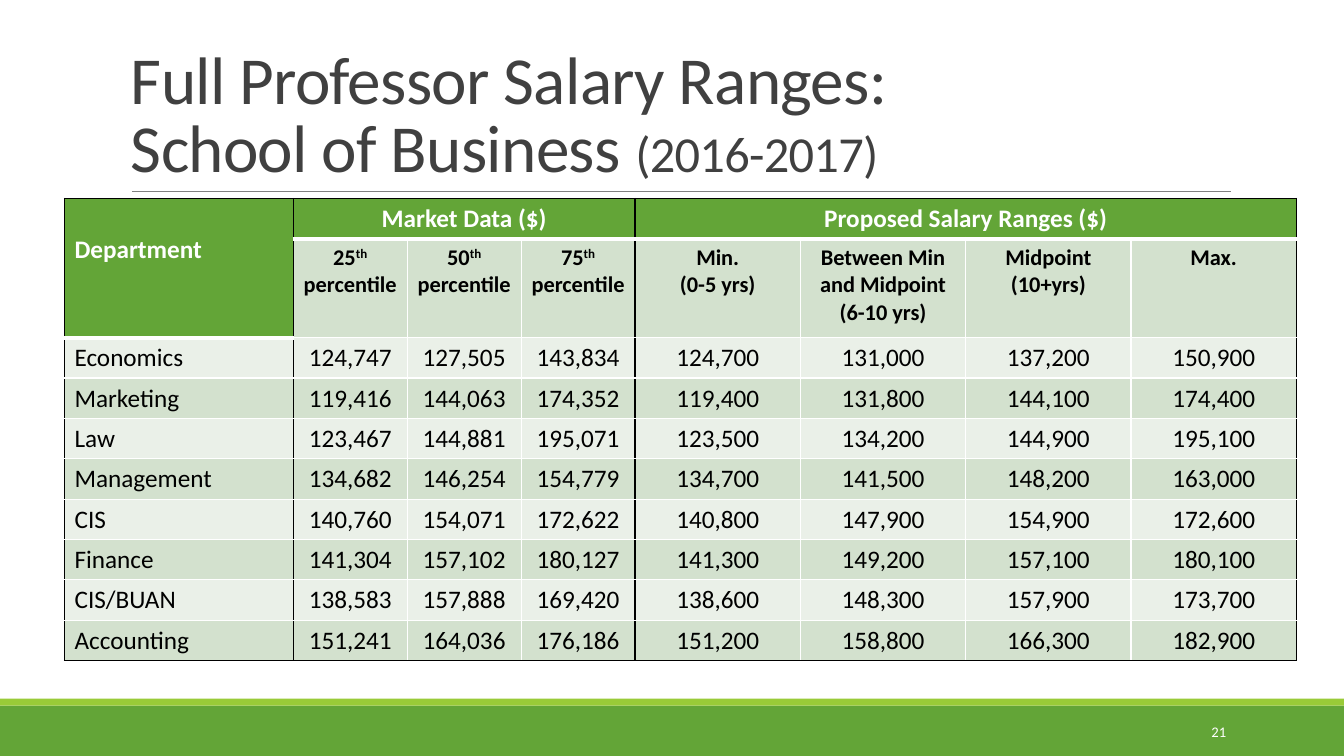
from lxml.etree import SubElement
from pptx import Presentation
from pptx.dml.color import RGBColor
from pptx.enum.shapes import MSO_CONNECTOR, MSO_SHAPE
from pptx.enum.text import MSO_ANCHOR as Anchor, PP_ALIGN as Align
from pptx.oxml.ns import qn
from pptx.util import Pt

COLORS = {
    "green": "63A537", "lime": "99CB38", "gray": "808080", "title": "404040",
    "band_dark": "D3E1CE", "band_light": "EAF0E8", "white": "FFFFFF", "black": "000000",
}
FONT = "Calibri"
WIDTH, HEIGHT = 960, 540

GROUPS = {0: "Department", 1: "Market Data ($)", 4: "Proposed Salary Ranges ($)"}
PERCENTILES = (25, 50, 75)
RANGES = [("Min.", "(0-5 yrs)"), ("Between Min and Midpoint", "(6-10 yrs)"),
          ("Midpoint", "(10+yrs)"), ("Max.",)]
SALARIES = [
    ("Economics", 124747, 127505, 143834, 124700, 131000, 137200, 150900),
    ("Marketing", 119416, 144063, 174352, 119400, 131800, 144100, 174400),
    ("Law", 123467, 144881, 195071, 123500, 134200, 144900, 195100),
    ("Management", 134682, 146254, 154779, 134700, 141500, 148200, 163000),
    ("CIS", 140760, 154071, 172622, 140800, 147900, 154900, 172600),
    ("Finance", 141304, 157102, 180127, 141300, 149200, 157100, 180100),
    ("CIS/BUAN", 138583, 157888, 169420, 138600, 148300, 157900, 173700),
    ("Accounting", 151241, 164036, 176186, 151200, 158800, 166300, 182900),
]
COLUMN_WIDTHS = [163.4] + [81.4] * 3 + [118.1] * 4
ROW_HEIGHTS = [28.1, 70.6] + [28.1] * len(SALARIES)
BLACK_EDGES = (0, 1, 4, 8)


class SlideBuilder:
    def __init__(self, slide):
        self.slide = slide

    def rectangle(self, left, top, width, height, color):
        shape = self.slide.shapes.add_shape(
            MSO_SHAPE.RECTANGLE, Pt(left), Pt(top), Pt(width), Pt(height))
        shape.shadow.inherit = False
        shape.fill.solid()
        shape.fill.fore_color.rgb = RGBColor.from_string(COLORS[color])
        shape.line.fill.background()

    def line(self, x1, y1, x2, y2, color, weight):
        connector = self.slide.shapes.add_connector(
            MSO_CONNECTOR.STRAIGHT, Pt(x1), Pt(y1), Pt(x2), Pt(y2))
        connector.line.color.rgb = RGBColor.from_string(COLORS[color])
        connector.line.width = Pt(weight)
        SubElement(connector._element.spPr, qn("a:effectLst"))

    def text_box(self, left, top, width, height, anchor):
        frame = self.slide.shapes.add_textbox(
            Pt(left), Pt(top), Pt(width), Pt(height)).text_frame
        frame.word_wrap = True
        frame.vertical_anchor = anchor
        return frame.paragraphs[0]

    def run(self, paragraph, text, size, color, bold=False, **attributes):
        run = paragraph.add_run()
        run.text = text
        run.font.name = FONT
        run.font.size = Pt(size)
        run.font.bold = bold
        run.font.color.rgb = RGBColor.from_string(COLORS[color])
        for name, value in attributes.items():
            run.font._element.set(name, str(value))

    def table(self, left, top, widths, heights):
        table = self.slide.shapes.add_table(
            len(heights), len(widths), Pt(left), Pt(top),
            Pt(sum(widths)), Pt(sum(heights))).table
        for column, width in zip(table.columns, widths):
            column.width = Pt(width)
        for row, height in zip(table.rows, heights):
            row.height = Pt(height)
        return table

    def cell_style(self, cell, fill, borders):
        properties = cell._tc.get_or_add_tcPr()
        for side, (color, weight) in borders.items():
            border = SubElement(properties, qn(f"a:ln{side}"), w=str(Pt(weight)))
            solid = SubElement(border, qn("a:solidFill"))
            SubElement(solid, qn("a:srgbClr"), val=COLORS[color])
        cell.fill.solid()
        cell.fill.fore_color.rgb = RGBColor.from_string(COLORS[fill])

    def cell_paragraphs(self, cell, count, align):
        frame = cell.text_frame
        while len(frame.paragraphs) < count:
            frame.add_paragraph()
        for paragraph in frame.paragraphs:
            paragraph.alignment = align
        return frame.paragraphs


def cell_borders(row, column, span):
    def vertical(edge):
        return ("black" if edge in BLACK_EDGES else "white", 1)

    last = row == len(ROW_HEIGHTS) - 1
    under_header = row == 0 or (row == 1 and column == 0)
    return {
        "L": vertical(column),
        "R": vertical(column + span),
        "T": ("black" if row == 0 else "white", 1),
        "B": ("black" if last else "white", 3 if under_header else 1),
    }


def add_salary_table(builder):
    table = builder.table(46.1, 141.8, COLUMN_WIDTHS, ROW_HEIGHTS)
    table.cell(0, 0).merge(table.cell(1, 0))
    table.cell(0, 1).merge(table.cell(0, 3))
    table.cell(0, 4).merge(table.cell(0, 7))

    # Fills and borders
    for row in range(len(ROW_HEIGHTS)):
        for column in range(len(COLUMN_WIDTHS)):
            cell = table.cell(row, column)
            header = row == 0 or (row == 1 and column == 0)
            fill = "green" if header else "band_dark" if row % 2 else "band_light"
            span = cell.span_width if cell.is_merge_origin else 1
            builder.cell_style(cell, fill, cell_borders(row, column, span))

    # Group headings
    for column, heading in GROUPS.items():
        align = Align.CENTER if column else Align.LEFT
        paragraph, = builder.cell_paragraphs(table.cell(0, column), 1, align)
        builder.run(paragraph, heading, 18, "white", True)
    table.cell(0, 0).margin_top = Pt(25.6)

    # Column headings
    for column, percentile in enumerate(PERCENTILES, 1):
        paragraph, = builder.cell_paragraphs(table.cell(1, column), 1, Align.CENTER)
        builder.run(paragraph, str(percentile), 16, "black", True)
        builder.run(paragraph, "th", 16, "black", True, baseline=30000)
        builder.run(paragraph, " percentile", 16, "black", True)
    for column, lines in enumerate(RANGES, 4):
        paragraphs = builder.cell_paragraphs(table.cell(1, column), len(lines), Align.CENTER)
        for paragraph, text in zip(paragraphs, lines):
            builder.run(paragraph, text, 16, "black", True)

    # Salaries by department
    for row, values in enumerate(SALARIES, 2):
        for column, value in enumerate(values):
            align = Align.CENTER if column else Align.LEFT
            text = f"{value:,}" if column else value
            paragraph, = builder.cell_paragraphs(table.cell(row, column), 1, align)
            builder.run(paragraph, text, 18, "black")


def main():
    presentation = Presentation()
    presentation.slide_width, presentation.slide_height = Pt(WIDTH), Pt(HEIGHT)
    builder = SlideBuilder(presentation.slides.add_slide(presentation.slide_layouts[6]))

    # Footer bands and title rule
    builder.rectangle(0, 504, WIDTH, 36, "green")
    builder.rectangle(0, 499, WIDTH, 5, "lime")
    builder.line(94.3, 136.8, 879, 136.8, "gray", 0.5)

    # Title
    title = builder.text_box(86.4, 22.5, 792, 114.2, Anchor.BOTTOM)
    title.line_spacing = 0.85
    builder.run(title, "Full Professor Salary Ranges:", 48, "title", spc=-50)
    title.add_line_break()
    builder.run(title, "School of Business ", 48, "title", spc=-50)
    builder.run(title, "(2016-2017)", 36, "title", spc=-50)

    add_salary_table(builder)

    # Slide number
    number = builder.text_box(780, 508.5, 103, 28.8, Anchor.MIDDLE)
    number.alignment = Align.RIGHT
    builder.run(number, "21", 10.5, "white")

    presentation.save("out.pptx")


if __name__ == "__main__":
    main()
